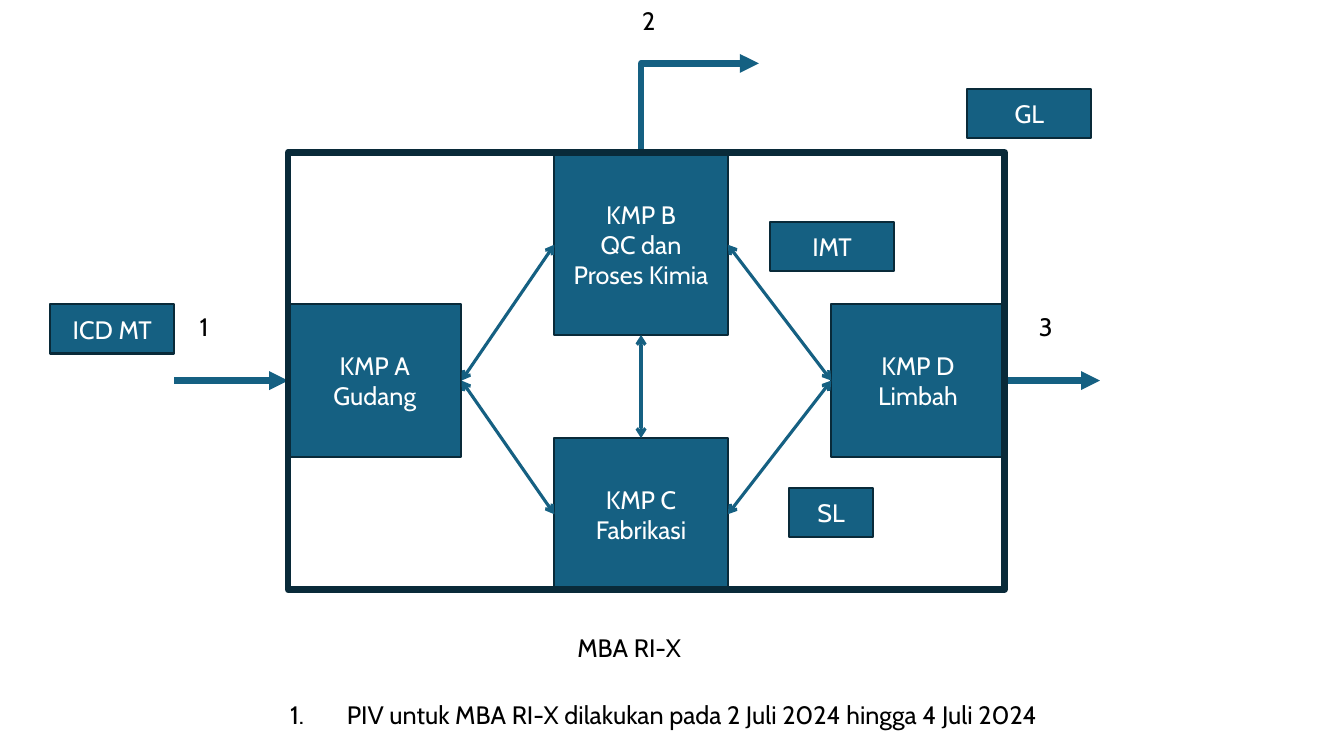
from lxml import etree
from pptx import Presentation
from pptx.dml.color import RGBColor
from pptx.enum import shapes, text
from pptx.oxml.ns import qn
from pptx.util import Cm, Pt

BLUE, NAVY, WHITE, BLACK = "156082", "092A39", "FFFFFF", "000000"
TOP, LEFT, BOTTOM, RIGHT = range(4)
TAG_W, TAG_H = 3.12, 1.24


def colour(hex_value):
    return RGBColor.from_string(hex_value)


def write(frame, lines, ink, align):
    frame.word_wrap = True
    for number, line in enumerate(lines):
        paragraph = frame.paragraphs[0] if number == 0 else frame.add_paragraph()
        paragraph.alignment = align
        run = paragraph.add_run()
        run.text = line
        for name, value in {"name": "Cabin", "size": Pt(18)}.items():
            setattr(run.font, name, value)
        run.font.color.rgb = colour(ink)


def add_box(slide, box, lines=(), fill=BLUE, weight=1.5):
    rect = slide.shapes.add_shape(shapes.MSO_SHAPE.RECTANGLE, *map(Cm, box))
    rect.shadow.inherit = False
    if fill:
        rect.fill.solid()
        rect.fill.fore_color.rgb = colour(fill)
    else:
        rect.fill.background()
    rect.line.color.rgb = colour(NAVY)
    rect.line.width = Pt(weight)
    rect.text_frame.vertical_anchor = text.MSO_ANCHOR.MIDDLE
    write(rect.text_frame, lines, WHITE, text.PP_ALIGN.CENTER)
    return rect


def add_label(slide, box, label):
    caption = slide.shapes.add_textbox(*map(Cm, box))
    write(caption.text_frame, [label], BLACK, text.PP_ALIGN.LEFT)
    return caption


def add_arrow(slide, begin, end, weight, kind=shapes.MSO_CONNECTOR.STRAIGHT, **heads):
    arrow = slide.shapes.add_connector(kind, *map(Cm, (*begin, *end)))
    arrow.line.color.rgb = colour(BLUE)
    arrow.line.width = Pt(weight)
    line = arrow.line._get_or_add_ln()
    for side, head in heads.items():
        etree.SubElement(line, qn(f"a:{side}End"), type=head)
    etree.SubElement(arrow._element.spPr, qn("a:effectLst"))
    return arrow


def add_mba(slide, box):
    """Draw the MBA frame, its four KMP boxes and the flows between them."""
    left, top, width, height = box
    kmp_w, kmp_h, tall_h = 4.37, 3.84, 4.55
    side_y, centre_x = top + 3.83, left + 6.71
    kmps = {
        "A": (left, side_y, kmp_h, ["KMP A", "Gudang"]),
        "B": (centre_x, top + 0.05, tall_h, ["KMP B", "QC dan Proses Kimia"]),
        "C": (centre_x, top + height - kmp_h + 0.02, kmp_h, ["KMP C", "Fabrikasi"]),
        "D": (left + width - kmp_w, side_y, kmp_h, ["KMP D Limbah"]),
    }
    placed = {key: add_box(slide, (x, y, kmp_w, h), lines)
              for key, (x, y, h, lines) in kmps.items()}
    flows = [("A", RIGHT, "B", LEFT), ("A", RIGHT, "C", LEFT), ("B", BOTTOM, "C", TOP),
             ("B", RIGHT, "D", LEFT), ("C", RIGHT, "D", LEFT)]
    for source, source_side, target, target_side in flows:
        flow = add_arrow(slide, (left, top), (left, top), 2.25, head="arrow", tail="arrow")
        flow.begin_connect(placed[source], source_side)
        flow.end_connect(placed[target], target_side)

    middle = side_y + kmp_h / 2
    receipt = add_arrow(slide, (left - 2.87, middle), (left, middle), 4.5, tail="triangle")
    receipt.end_connect(placed["A"], LEFT)
    disposal = add_arrow(slide, (left + width, middle), (left + width + 2.4, middle),
                         4.5, tail="triangle")
    disposal.begin_connect(placed["D"], RIGHT)
    add_bent_exit(slide, (centre_x + kmp_w / 2, top + 0.05), 2.97, 2.29)
    add_box(slide, box, fill=None, weight=4.5)


def add_bent_exit(slide, start, run, rise):
    """Draw an arrow that goes up from start, then turns right."""
    x, y = start[0] + run / 2, start[1] - rise / 2
    bend = add_arrow(slide, (x + rise / 2, y + run / 2), (x - rise / 2, y - run / 2),
                     4.5, shapes.MSO_CONNECTOR.ELBOW, tail="triangle")
    properties = bend._element.spPr
    properties.find(qn("a:xfrm")).set("rot", str(90 * 60000))
    properties.find(qn("a:prstGeom")).set("prst", "bentConnector2")


def add_flow_numbers(slide):
    for number, x, y in [("1", 4.78, 7.72), ("2", 15.93, 0), ("3", 25.93, 7.72)]:
        add_label(slide, (x, y, 1.7, 1.52), number)


def add_tags(slide):
    for tag, x, y, width in [("ICD MT", 1.27, 7.67, TAG_W), ("IMT", 19.41, 5.59, TAG_W),
                             ("GL", 24.38, 2.24, TAG_W), ("SL", 19.89, 12.29, 2.11)]:
        add_box(slide, (x, y, width, TAG_H), [tag])


def add_notes_below(slide):
    add_label(slide, (14.3, 15.8, 3.71, 1.02), "MBA RI-X")
    schedule = add_label(slide, (7.06, 17.5, 23.16, 1.02),
                         "PIV untuk MBA RI-X dilakukan pada 2 Juli 2024 hingga 4 Juli 2024")
    numbering = schedule.text_frame.paragraphs[0]._p.get_or_add_pPr()
    for name, indent in {"marL": 1.43, "indent": -1.43}.items():
        numbering.set(name, str(Cm(indent)))
    etree.SubElement(numbering, qn("a:buFont"), typeface="Cabin")
    etree.SubElement(numbering, qn("a:buAutoNum"), type="arabicPeriod")


def main():
    deck = Presentation()
    deck.slide_width, deck.slide_height = Cm(33.87), Cm(19.05)
    slide = deck.slides.add_slide(deck.slide_layouts[6])
    add_mba(slide, (7.26, 3.84, 18.06, 11.02))
    add_flow_numbers(slide)
    add_notes_below(slide)
    add_tags(slide)
    deck.save("out.pptx")


if __name__ == "__main__":
    main()
